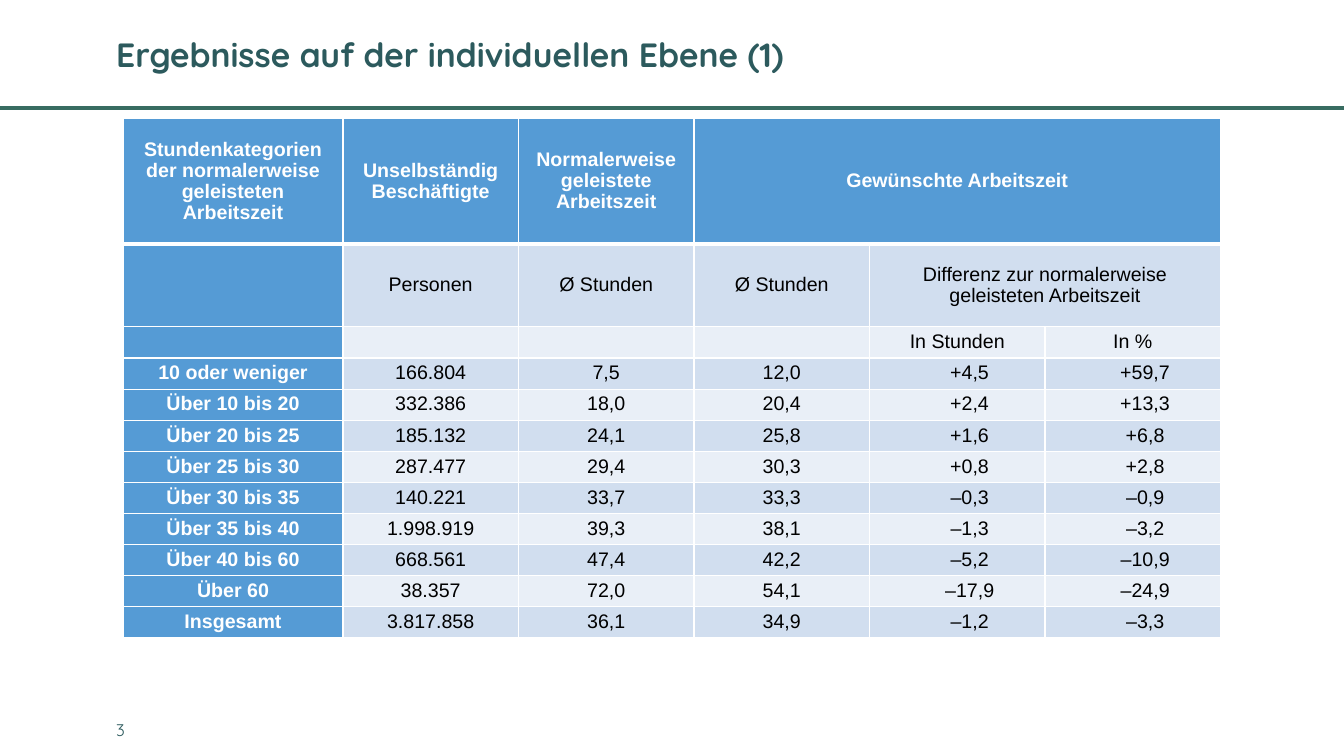
from lxml import etree
from pptx import Presentation
from pptx.dml.color import RGBColor
from pptx.enum.shapes import MSO_CONNECTOR
from pptx.enum.text import MSO_ANCHOR, PP_ALIGN
from pptx.oxml.ns import qn
from pptx.util import Pt

MIDDLE = MSO_ANCHOR.MIDDLE
CENTER = PP_ALIGN.CENTER
STRAIGHT = MSO_CONNECTOR.STRAIGHT

WHITE = RGBColor(0xFF, 0xFF, 0xFF)
BLACK = RGBColor(0x00, 0x00, 0x00)
PETROL = RGBColor(0x2C, 0x5A, 0x5D)
RULE_GREEN = RGBColor(0x38, 0x6C, 0x61)
HEADER_BLUE = RGBColor(0x55, 0x9B, 0xD5)
BANDS = (RGBColor(0xD1, 0xDE, 0xEF), RGBColor(0xE9, 0xEF, 0xF7))

SLIDE_WIDTH, SLIDE_HEIGHT = 960, 540
COLUMN_WIDTHS = [157] + [125.4] * 5
ROW_HEIGHTS = [90, 59] + [22.25] * 10
WIDE_MARGINS = (7.2, 3.6)
NARROW_MARGINS = (5.4, 0)

# Tab stops of the figures: position in points and alignment
DIFFERENCE_TABS = [(21.6, "ctr"), (33.84, "dec")]
COLUMN_TABS = [[], [(51.12, "dec")], [(33.84, "dec")], [(33.84, "dec")],
               DIFFERENCE_TABS, DIFFERENCE_TABS]

HEADINGS = [
    ["Stundenkategorien der normalerweise geleisteten Arbeitszeit",
     "Unselbständig Beschäftigte", "Normalerweise geleistete Arbeitszeit",
     "Gewünschte Arbeitszeit", "", ""],
    ["", "Personen", "Ø Stunden", "Ø Stunden",
     "Differenz zur normalerweise geleisteten Arbeitszeit", ""],
    ["", "", "", "", "In Stunden", "In %"],
]
MERGED = {(0, 3), (1, 4)}  # headings that reach to the last column

WORKING_TIMES = [
    ["10 oder weniger", "166.804", "7,5", "12,0", "\t+\t4,5", "\t+\t59,7"],
    ["Über 10 bis 20", "332.386", "18,0", "20,4", "\t+\t2,4", "\t+\t13,3"],
    ["Über 20 bis 25", "185.132", "24,1", "25,8", "\t+\t1,6", "\t+\t6,8"],
    ["Über 25 bis 30", "287.477", "29,4", "30,3", "\t+\t0,8", "\t+\t2,8"],
    ["Über 30 bis 35", "140.221", "33,7", "33,3", "\t–\t0,3", "\t–\t0,9"],
    ["Über 35 bis 40", "1.998.919", "39,3", "38,1", "\t–\t1,3", "\t–\t3,2"],
    ["Über 40 bis 60", "668.561", "47,4", "42,2", "\t–\t5,2", "\t–\t10,9"],
    ["Über 60", "38.357", "72,0", "54,1", "\t–\t17,9", "\t–\t24,9"],
    ["Insgesamt", "3.817.858", "36,1", "34,9", "\t–\t1,2", "\t–\t3,3"],
]


def add_run(paragraph, text, font_name, size, color, bold=False):
    run = paragraph.add_run()
    run.text = text
    run.font.name = font_name
    run.font.size = Pt(size)
    run.font.bold = bold
    run.font.color.rgb = color


def add_label(slide, box, margins, text, size, bold=False):
    """Add one line of Quicksand text; margins are left, top, right, bottom."""
    label = slide.shapes.add_textbox(*map(Pt, box))
    frame = label.text_frame
    frame.word_wrap = True
    frame.vertical_anchor = MIDDLE
    (frame.margin_left, frame.margin_top,
     frame.margin_right, frame.margin_bottom) = map(Pt, margins)
    add_run(frame.paragraphs[0], text, "Quicksand", size, PETROL, bold)
    return label


def add_rule(slide, y):
    rule = slide.shapes.add_connector(STRAIGHT, 0, Pt(y), Pt(SLIDE_WIDTH), Pt(y))
    rule.line.color.rgb = RULE_GREEN
    rule.line.width = Pt(2.25)
    etree.SubElement(rule._element.spPr, qn("a:effectLst"))


def add_tabs(paragraph, stops):
    tab_list = etree.SubElement(paragraph._p.get_or_add_pPr(), qn("a:tabLst"))
    for position, alignment in stops:
        etree.SubElement(tab_list, qn("a:tab"), pos=str(Pt(position)), algn=alignment)


def add_borders(cell, row):
    """Draw white borders, with a thicker one below the header row."""
    widths = {"L": 1, "R": 1, "T": 3 if row == 1 else 1, "B": 3 if row == 0 else 1}
    for side, width in widths.items():
        border = etree.SubElement(cell._tc.get_or_add_tcPr(), qn("a:ln" + side),
                                  w=str(Pt(width)))
        fill = etree.SubElement(border, qn("a:solidFill"))
        etree.SubElement(fill, qn("a:srgbClr"), val=str(WHITE))


def fill_cell(cell, row, column, text):
    is_header = row == 0 or column == 0
    horizontal, vertical = WIDE_MARGINS if (row, column) in MERGED else NARROW_MARGINS
    cell.margin_left = cell.margin_right = Pt(horizontal)
    cell.margin_top = cell.margin_bottom = Pt(vertical)
    cell.vertical_anchor = MIDDLE
    add_borders(cell, row)
    cell.fill.solid()
    cell.fill.fore_color.rgb = HEADER_BLUE if is_header else BANDS[(row - 1) % 2]

    paragraph = cell.text_frame.paragraphs[0]
    if row >= len(HEADINGS) and COLUMN_TABS[column]:
        add_tabs(paragraph, COLUMN_TABS[column])
    paragraph.alignment = CENTER
    paragraph.line_spacing = Pt(15)
    paragraph.space_before = Pt(0)
    paragraph.space_after = Pt(1)
    if text:
        add_run(paragraph, text, "Arial", 14, WHITE if is_header else BLACK, is_header)


def add_working_time_table(slide, left, top):
    rows = HEADINGS + WORKING_TIMES
    table = slide.shapes.add_table(
        len(rows), len(COLUMN_WIDTHS), Pt(left), Pt(top),
        Pt(sum(COLUMN_WIDTHS)), Pt(sum(ROW_HEIGHTS))).table
    table.first_row = False
    table.horz_banding = False
    for column, width in zip(table.columns, COLUMN_WIDTHS):
        column.width = Pt(width)
    for row, height in zip(table.rows, ROW_HEIGHTS):
        row.height = Pt(height)
    for row, texts in enumerate(rows):
        for column, text in enumerate(texts):
            fill_cell(table.cell(row, column), row, column, text)
    for row, column in MERGED:
        table.cell(row, column).merge(table.cell(row, len(COLUMN_WIDTHS) - 1))


def main():
    presentation = Presentation()
    presentation.slide_width = Pt(SLIDE_WIDTH)
    presentation.slide_height = Pt(SLIDE_HEIGHT)
    slide = presentation.slides.add_slide(presentation.slide_layouts[6])

    add_rule(slide, 77.2)
    add_label(slide, (83, 512.6, 223, 17.4), (0, 3.6, 7.2, 3.6), "3", 12)
    add_working_time_table(slide, 88, 84.5)
    title = add_label(slide, (83, 6, 793.5, 65), (0, 0, 0, 0),
                      "Ergebnisse auf der individuellen Ebene (1)", 24, bold=True)
    title.fill.solid()
    title.fill.fore_color.rgb = WHITE

    presentation.save("out.pptx")


if __name__ == "__main__":
    main()
